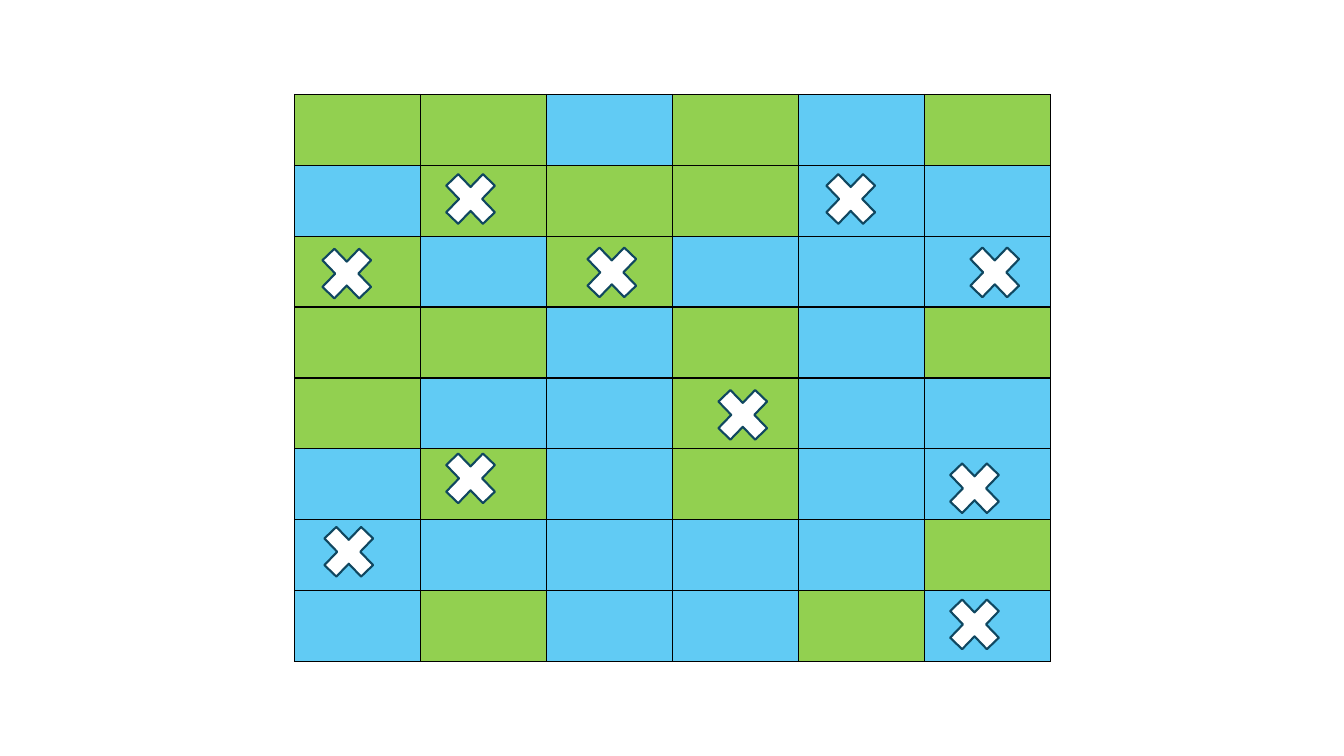
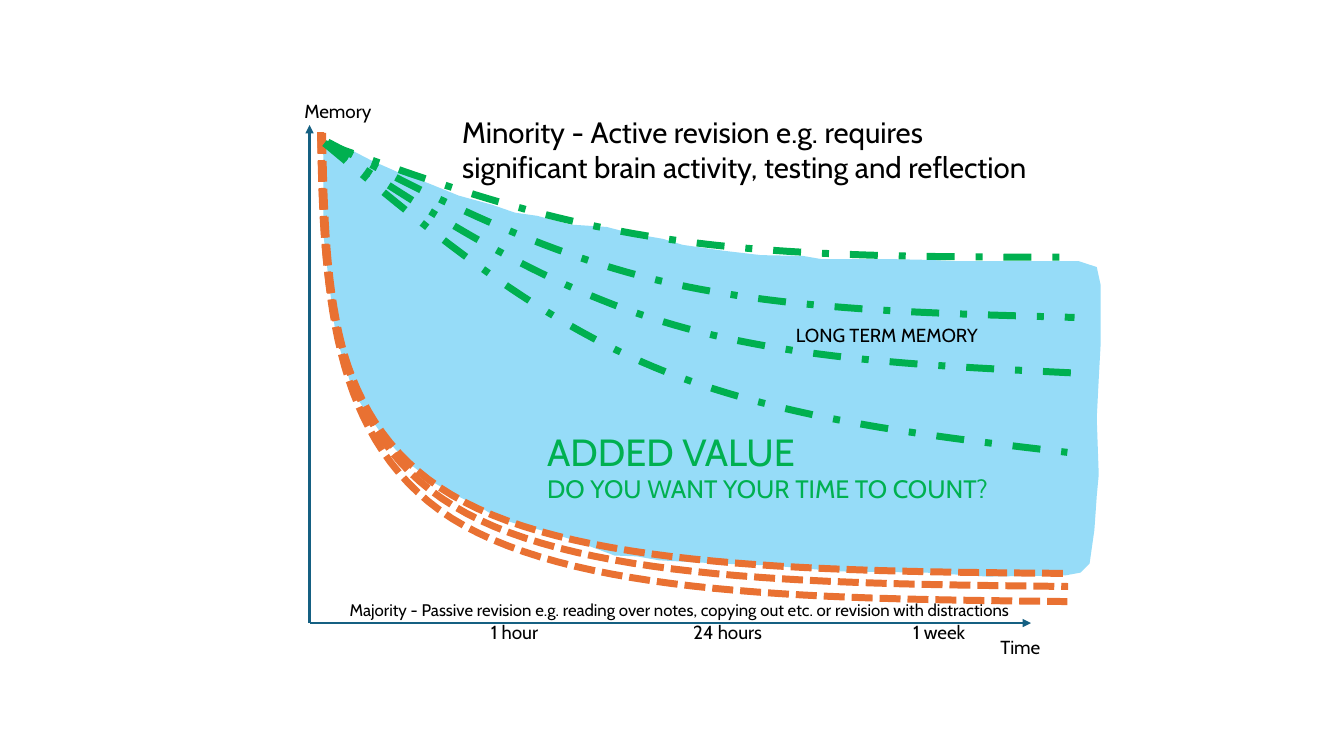
from dataclasses import dataclass

from lxml.etree import SubElement
from pptx import Presentation
from pptx.dml.color import RGBColor
from pptx.enum.dml import MSO_LINE
from pptx.enum.shapes import MSO_CONNECTOR, MSO_SHAPE
from pptx.enum.text import PP_ALIGN
from pptx.oxml.ns import qn
from pptx.util import Cm, Pt


@dataclass(frozen=True)
class Theme:
    font: str = "Cabin"
    black: str = "000000"
    white: str = "FFFFFF"
    lime: str = "92D050"
    sky: str = "61CBF4"
    pale: str = "96DCF8"
    navy: str = "104760"
    axis: str = "156082"
    orange: str = "E97132"
    green: str = "00B050"
    small: float = 12
    label: float = 13.5
    prompt: float = 18
    lead: float = 21
    headline: float = 27
    border_width: float = 1
    thin_width: float = 1.5
    curve_width: float = 5


THEME = Theme()

GRID_ROWS = ["GGBGBG", "BGGGBB", "GBGBBB", "GGBGBG",
             "GBBGBB", "BGBGBB", "BBBBBG", "BGBBGB"]
GRID_COLOURS = {"G": THEME.lime, "B": THEME.sky}
GRID_BOX = (7.42, 2.38, 19.05, 14.29)

CROSS_SIZE = (1.78, 1.85)
CROSSES = [(10.97, 4.09), (17.83, 9.53), (10.97, 11.13), (20.55, 4.09), (23.67, 14.81),
           (7.85, 5.97), (7.9, 12.98), (23.67, 11.38), (24.18, 5.94), (14.53, 5.94)]

ADDED_AREA = [
    (8.05, 3.58), (8.15, 3.91), (8.15, 5.89), (8.28, 7.04), (8.46, 8.43), (8.71, 9.27),
    (8.92, 9.91), (9.3, 10.49), (9.68, 11.02), (10.29, 11.66), (10.95, 12.17),
    (11.43, 12.45), (12.14, 12.8), (12.55, 13.06), (12.95, 13.18), (13.82, 13.41),
    (14.45, 13.61), (15.06, 13.84), (15.49, 14), (16.05, 14.02), (16.61, 14.12),
    (18.08, 14.2), (19.41, 14.25), (21.16, 14.4), (23.34, 14.43), (24.89, 14.53),
    (26.85, 14.5), (27.23, 14.43), (27.46, 14.2), (27.58, 13.36), (27.64, 12.5),
    (27.69, 11.96), (27.64, 10.54), (27.69, 9.55), (27.74, 8.64), (27.74, 7.19),
    (27.64, 6.73), (27.18, 6.58), (24, 6.58), (23.42, 6.55), (22.43, 6.53),
    (20.7, 6.53), (20.24, 6.45), (19.18, 6.43), (18.24, 6.32), (17.2, 6.17),
    (16.71, 6.02), (15.95, 5.89), (15.29, 5.72), (14.38, 5.66), (13.54, 5.44),
    (12.98, 5.36), (12.4, 5.16), (11.56, 4.93), (10.8, 4.62), (10.03, 4.34),
    (9.35, 4.04), (8.81, 3.76), (8.26, 3.61)]

PASSIVE_CURVES = [
    [(8.08, 3.33), (8.18, 7.19), (8.26, 11.07), (11.38, 13.06),
     (14.53, 15.04), (20.7, 15.09), (26.9, 15.16)],
    [(8.13, 3.35), (8.2, 7.09), (8.28, 10.85), (11.43, 12.75),
     (14.55, 14.66), (20.73, 14.71), (26.92, 14.78)],
    [(8.08, 3.35), (8.15, 6.99), (8.23, 10.62), (11.38, 12.47),
     (14.5, 14.33), (20.68, 14.4), (26.87, 14.45)]]

ACTIVE_CURVES = [
    [(8.18, 3.61), (10.77, 5.77), (13.36, 7.95), (16.48, 9.25),
     (19.58, 10.54), (23.24, 10.97), (26.9, 11.4)],
    [(8.18, 3.61), (10.85, 5.38), (13.54, 7.14), (16.69, 8.1),
     (19.84, 9.07), (23.44, 9.22), (27.08, 9.4)],
    [(8.26, 3.58), (10.92, 4.98), (13.56, 6.35), (16.69, 7.09),
     (19.84, 7.82), (23.44, 7.9), (27.08, 8)],
    [(8.23, 3.63), (10.85, 4.57), (13.46, 5.51), (16.59, 5.99),
     (19.71, 6.48), (23.32, 6.48), (26.95, 6.48)]]

CURVE_GROUPS = [(PASSIVE_CURVES, THEME.orange, MSO_LINE.SQUARE_DOT),
                (ACTIVE_CURVES, THEME.green, MSO_LINE.DASH_DOT)]

AXIS_ORIGIN = (7.8, 15.7)
AXIS_TIPS = [(7.8, 3.15), (25.98, 15.7)]

LABELS = [
    ("Memory", dict(at=(7.42, 2.39, 3.23, 0.84))),
    ("Time", dict(at=(23.24, 15.9, 3.23, 0.84), align=PP_ALIGN.RIGHT)),
    ("1 hour", dict(at=(12.12, 15.52, 2.39, 0.84))),
    ("24 hours", dict(at=(17.22, 15.52, 2.39, 0.84))),
    ("1 week", dict(at=(22.76, 15.52, 2.39, 0.84))),
    ("Majority - Passive revision e.g. reading over notes, copying out etc. "
     "or revision with distractions",
     dict(at=(8.56, 14.99, 18.03, 0.76), sizes=[THEME.small])),
    ("Minority - Active revision e.g. requires significant brain activity, "
     "testing and reflection",
     dict(at=(11.4, 2.74, 15.01, 2.95), sizes=[THEME.lead])),
    ("LONG TERM MEMORY", dict(at=(19.81, 8.03, 9.75, 0.84))),
    ("ADDED VALUE\nDO YOU WANT YOUR TIME TO COUNT?",
     dict(at=(13.54, 10.67, 15.8, 2.18), sizes=[THEME.headline, THEME.prompt],
          colour=THEME.green)),
]


def rgb(colour):
    return RGBColor.from_string(colour)


def lengths(values):
    return [Cm(value) for value in values]


def set_line(shape, colour, width):
    shape.line.color.rgb = rgb(colour)
    shape.line.width = Pt(width)


def set_fill(shape, colour):
    shape.fill.solid()
    shape.fill.fore_color.rgb = rgb(colour)


def add_text(page, text, *, at, sizes=(THEME.label,), colour=THEME.black, align=PP_ALIGN.LEFT):
    box = page.shapes.add_textbox(*lengths(at))
    frame = box.text_frame
    frame.word_wrap = True
    frame.text = text
    for para, size in zip(frame.paragraphs, sizes):
        para.alignment = align
        for span in para.runs:
            span.font.name = THEME.font
            span.font.size = Pt(size)
            span.font.color.rgb = rgb(colour)


def add_outline(page, points, close):
    start, *rest = [lengths(point) for point in points]
    builder = page.shapes.build_freeform(*start)
    builder.add_line_segments(rest, close=close)
    shape = builder.convert_to_shape()
    shape.shadow.inherit = False
    return shape


def sample_curve(knots, steps=30):
    points = [knots[0]]
    for first in range(0, len(knots) - 1, 3):
        controls = knots[first:first + 4]
        for step in range(1, steps + 1):
            t = step / steps
            weights = ((1 - t) ** 3, 3 * t * (1 - t) ** 2, 3 * t ** 2 * (1 - t), t ** 3)
            points.append(tuple(sum(weight * value for weight, value in zip(weights, axis))
                                for axis in zip(*controls)))
    return points


def add_curve(page, knots, colour, dash):
    curve = add_outline(page, sample_curve(knots), close=False)
    curve.fill.background()
    set_line(curve, colour, THEME.curve_width)
    curve.line.dash_style = dash


def add_axis(page, tip):
    axis = page.shapes.add_connector(MSO_CONNECTOR.STRAIGHT, *lengths(AXIS_ORIGIN + tip))
    set_line(axis, THEME.axis, THEME.thin_width)
    properties = axis._element.spPr
    SubElement(properties.find(qn("a:ln")), qn("a:tailEnd"), type="triangle")
    SubElement(properties, qn("a:effectLst"))


def add_borders(cell):
    properties = cell._tc.get_or_add_tcPr()
    for side in ("lnL", "lnR", "lnT", "lnB"):
        line = SubElement(properties, qn(f"a:{side}"), w=str(Pt(THEME.border_width)))
        fill = SubElement(line, qn("a:solidFill"))
        SubElement(fill, qn("a:srgbClr"), val=THEME.black)


def add_grid(page):
    columns = len(GRID_ROWS[0])
    table = page.shapes.add_table(len(GRID_ROWS), columns, *lengths(GRID_BOX)).table
    table.first_row = table.horz_banding = False
    for column in table.columns:
        column.width = Cm(GRID_BOX[2] / columns)
    for row, codes in zip(table.rows, GRID_ROWS):
        row.height = Cm(GRID_BOX[3] / len(GRID_ROWS))
        for cell, code in zip(row.cells, codes):
            add_borders(cell)
            set_fill(cell, GRID_COLOURS[code])


def build_grid_page(page):
    add_grid(page)
    for corner in CROSSES:
        cross = page.shapes.add_shape(MSO_SHAPE.MATH_MULTIPLY, *lengths(corner + CROSS_SIZE))
        cross.shadow.inherit = False
        set_fill(cross, THEME.white)
        set_line(cross, THEME.navy, THEME.thin_width)


def build_memory_page(page):
    area = add_outline(page, ADDED_AREA, close=True)
    set_fill(area, THEME.pale)
    area.line.fill.background()
    for tip in AXIS_TIPS:
        add_axis(page, tip)
    for curves, colour, dash in CURVE_GROUPS:
        for knots in curves:
            add_curve(page, knots, colour, dash)
    for text, style in LABELS:
        add_text(page, text, **style)


def main():
    deck = Presentation()
    deck.slide_width, deck.slide_height = Cm(33.87), Cm(19.05)
    blank = deck.slide_layouts[6]
    for build in (build_grid_page, build_memory_page):
        build(deck.slides.add_slide(blank))
    deck.save("out.pptx")


if __name__ == "__main__":
    main()
